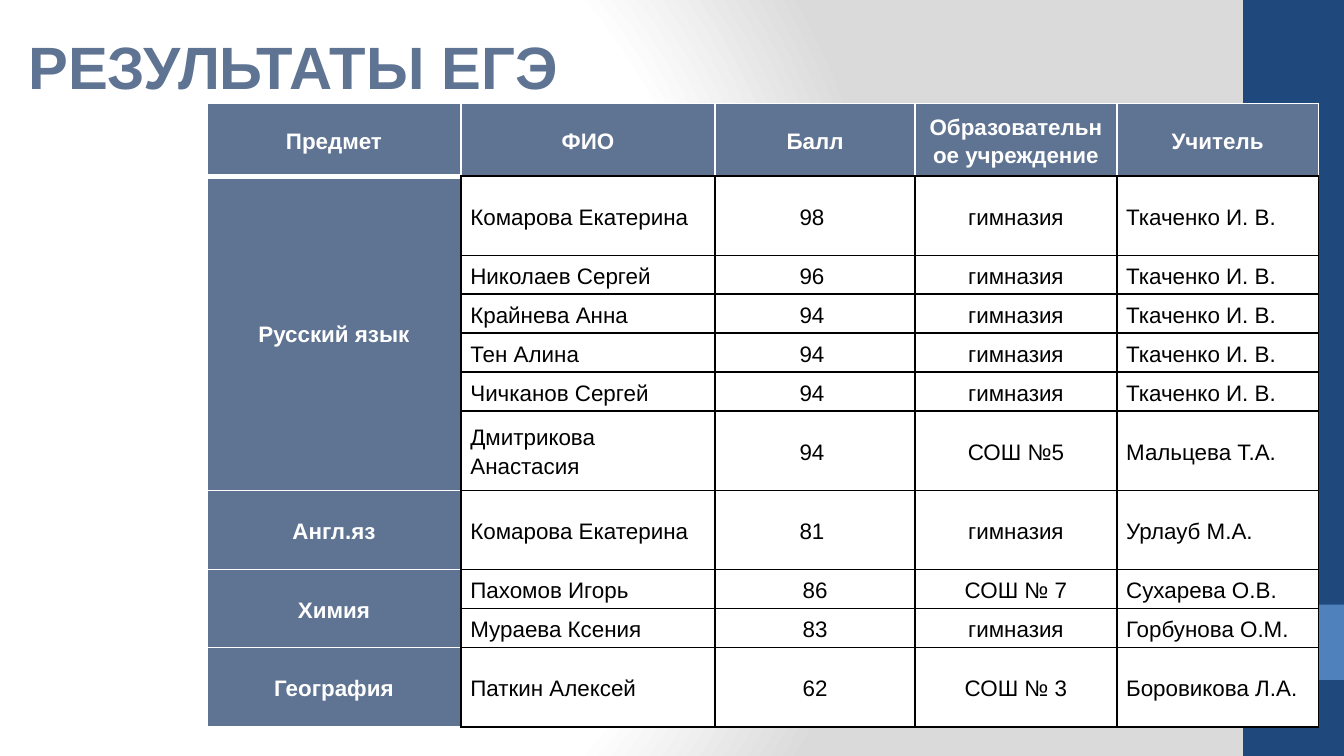
import pptx
import pptx.util
import pptx.dml.color
import pptx.enum.shapes
import pptx.enum.text
import pptx.oxml
import pptx.oxml.ns

Inches = pptx.util.Inches
Pt = pptx.util.Pt
RGBColor = pptx.dml.color.RGBColor
Align = pptx.enum.text.PP_ALIGN
Anchor = pptx.enum.text.MSO_ANCHOR

WHITE = RGBColor(0xFF, 0xFF, 0xFF)
BLACK = RGBColor(0, 0, 0)
GREY = RGBColor(0xDA, 0xDA, 0xDA)
SLATE = RGBColor(0x5F, 0x74, 0x92)
NAVY = RGBColor(0x1F, 0x49, 0x7D)
BLUE = RGBColor(0x4F, 0x81, 0xBD)

PAGE_WIDTH = 10
PAGE_HEIGHT = PAGE_WIDTH * 9 / 16

TITLE_FONT = {"name": "Arial", "size": Pt(32), "bold": True}
HEADING_FONT = {"name": "Arial", "size": Pt(12), "bold": True}
BODY_FONT = {"name": "Arial", "size": Pt(12), "bold": False}
CELL_FORMAT = {
    "margin_left": Inches(0.07),
    "margin_right": Inches(0.07),
    "margin_top": 0,
    "margin_bottom": 0,
    "vertical_anchor": Anchor.MIDDLE,
}
TITLE_FORMAT = {
    "word_wrap": True,
    "margin_left": Inches(0.02),
    "margin_right": 0,
    "margin_top": Inches(0.01),
    "margin_bottom": 0,
}

HEADINGS = ["Предмет", "ФИО", "Балл", "Образовательное учреждение", "Учитель"]
RESULTS = {
    "Русский язык": [
        ("Комарова Екатерина", "98 ", "гимназия", "Ткаченко И. В."),
        ("Николаев Сергей", "96 ", "гимназия", "Ткаченко И. В."),
        ("Крайнева Анна", "94 ", "гимназия", "Ткаченко И. В."),
        ("Тен Алина", "94 ", "гимназия", "Ткаченко И. В."),
        ("Чичканов Сергей", "94 ", "гимназия", "Ткаченко И. В."),
        ("Дмитрикова Анастасия", "94 ", "СОШ №5", "Мальцева Т.А."),
    ],
    "Англ.яз": [("Комарова Екатерина", "81 ", "гимназия", "Урлауб М.А.")],
    "Химия": [
        ("Пахомов Игорь", "86", "СОШ № 7", "Сухарева О.В."),
        ("Мураева Ксения", "83", "гимназия", "Горбунова О.М."),
    ],
    "География": [("Паткин Алексей", "62", "СОШ № 3", "Боровикова Л.А.")],
}
COLUMN_WIDTHS = [1.89, 1.89, 1.49, 1.5, 1.5]
SHORT, TALL = 0.29, 0.59
ROW_HEIGHTS = [0.54, TALL, *[SHORT] * 4, TALL, TALL, SHORT, SHORT, TALL]
BODY_ALIGNS = [Align.LEFT, Align.CENTER, Align.CENTER, Align.LEFT]

BODY_BORDERS = {side: (BLACK, 1) for side in "LRTB"}
HEADING_BORDERS = {side: (WHITE, 1) for side in "LRT"} | {"B": (BLACK, 1)}
CORNER_BORDERS = HEADING_BORDERS | {"B": (WHITE, 3)}
SUBJECT_BORDERS = {"L": (WHITE, 1), "R": (BLACK, 1), "T": (WHITE, 1), "B": (WHITE, 1)}


def apply_format(target, values):
    for name, value in values.items():
        setattr(target, name, value)


def write_text(para, text, font, color):
    span = para.add_run()
    span.text = text
    apply_format(span.font, font)
    span.font.color.rgb = color


def set_background(page):
    stops = "".join(
        f'<a:gs pos="{position * 1000}"><a:srgbClr val="{color}"/></a:gs>'
        for position, color in [(0, WHITE), (75, WHITE), (100, GREY)]
    )
    background = pptx.oxml.parse_xml(
        f'<p:bg {pptx.oxml.ns.nsdecls("p", "a")}><p:bgPr><a:gradFill rotWithShape="1">'
        f'<a:gsLst>{stops}</a:gsLst><a:path path="circle">'
        '<a:fillToRect l="20000" t="50000" r="100000" b="50000"/></a:path>'
        "</a:gradFill><a:effectLst/></p:bgPr></p:bg>"
    )
    page.element.cSld.insert(0, background)


def add_band(page, top, height, color):
    band = page.shapes.add_shape(
        pptx.enum.shapes.MSO_SHAPE.RECTANGLE,
        Inches(9.25), Inches(top), Inches(0.75), Inches(height),
    )
    band.shadow.inherit = False
    band.fill.solid()
    band.fill.fore_color.rgb = color
    band.line.fill.background()


def add_title(page, text):
    box = page.shapes.add_textbox(Inches(0.19), Inches(0.21), Inches(4.89), Inches(1.5))
    apply_format(box.text_frame, TITLE_FORMAT)
    write_text(box.text_frame.paragraphs[0], text, TITLE_FONT, SLATE)


def style_cell(cell, fill, borders):
    apply_format(cell, CELL_FORMAT)
    cell.fill.solid()
    cell.fill.fore_color.rgb = fill
    properties = cell._tc.get_or_add_tcPr()
    for index, (side, (color, width)) in enumerate(borders.items()):
        line = pptx.oxml.parse_xml(
            f'<a:ln{side} {pptx.oxml.ns.nsdecls("a")} w="{Pt(width)}"><a:solidFill>'
            f'<a:srgbClr val="{color}"/></a:solidFill></a:ln{side}>'
        )
        properties.insert(index, line)


def write_cell(cell, text, font, color, align):
    para = cell.text_frame.paragraphs[0]
    apply_format(para, {"alignment": align, "line_spacing": 1.15})
    write_text(para, text, font, color)


def add_results_table(page):
    table = page.shapes.add_table(
        len(ROW_HEIGHTS), len(COLUMN_WIDTHS),
        Inches(1.54), Inches(0.77), Inches(sum(COLUMN_WIDTHS)), Inches(sum(ROW_HEIGHTS)),
    ).table
    for column, width in zip(table.columns, COLUMN_WIDTHS):
        column.width = Inches(width)
    for row, height in zip(table.rows, ROW_HEIGHTS):
        row.height = Inches(height)

    for column, heading in enumerate(HEADINGS):
        cell = table.cell(0, column)
        style_cell(cell, SLATE, HEADING_BORDERS if column else CORNER_BORDERS)
        write_cell(cell, heading, HEADING_FONT, WHITE, Align.CENTER)

    row = 1
    for subject, pupils in RESULTS.items():
        first = table.cell(row, 0)
        write_cell(first, subject, HEADING_FONT, WHITE, Align.CENTER)
        for pupil in pupils:
            style_cell(table.cell(row, 0), SLATE, SUBJECT_BORDERS)
            for column, (text, align) in enumerate(zip(pupil, BODY_ALIGNS), 1):
                cell = table.cell(row, column)
                style_cell(cell, WHITE, BODY_BORDERS)
                write_cell(cell, text, BODY_FONT, BLACK, align)
            row += 1
        if len(pupils) > 1:
            first.merge(table.cell(row - 1, 0))


def main():
    deck = pptx.Presentation()
    deck.slide_width = Inches(PAGE_WIDTH)
    deck.slide_height = Inches(PAGE_HEIGHT)
    page = deck.slides.add_slide(deck.slide_layouts[6])
    set_background(page)
    add_band(page, 0, PAGE_HEIGHT, NAVY)
    add_band(page, 4.5, 0.56, BLUE)
    add_title(page, "РЕЗУЛЬТАТЫ ЕГЭ")
    add_results_table(page)
    deck.save("out.pptx")


if __name__ == "__main__":
    main()
